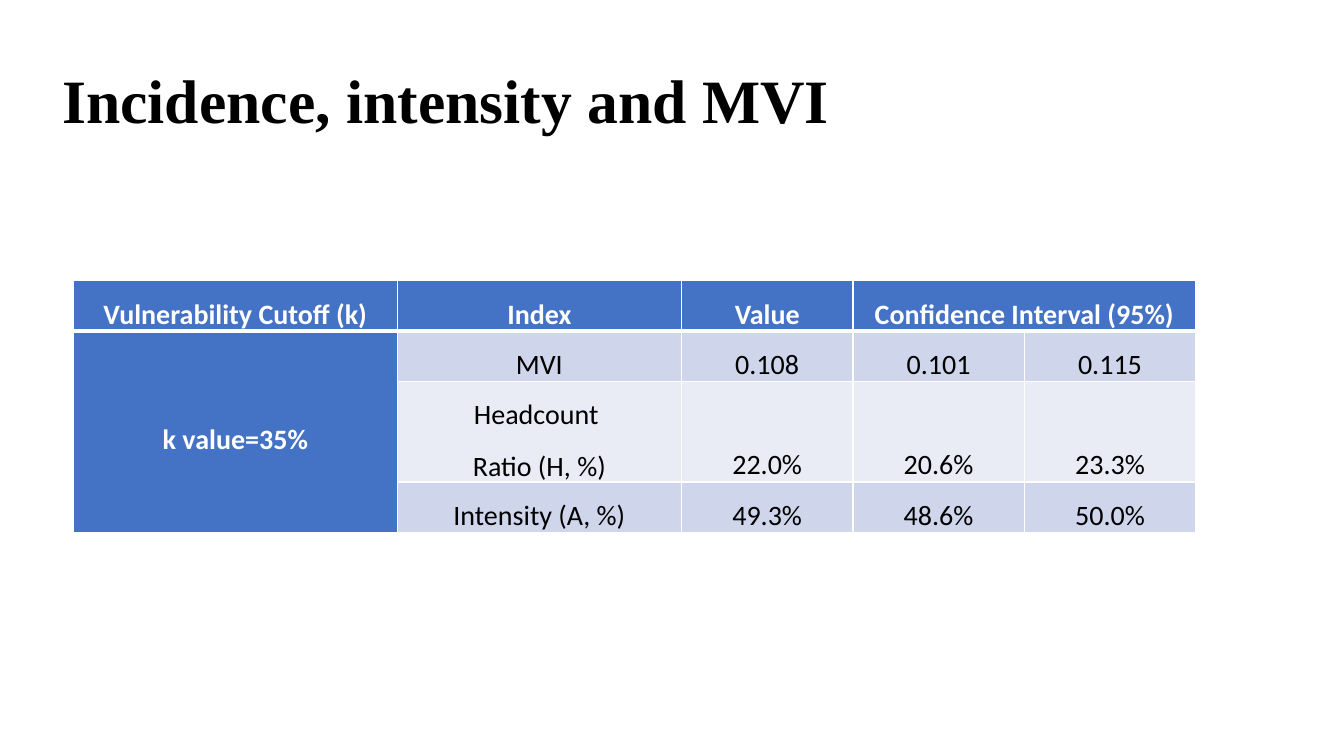
from lxml import etree
from pptx import Presentation
from pptx import util as u
from pptx.dml.color import RGBColor
from pptx.enum import text
from pptx.oxml.ns import qn

BLUE, BAND, LIGHT = "4472C4", "CFD5EA", "E9EBF5"
WHITE, BLACK = "FFFFFF", "000000"
MIDDLE, BOTTOM = text.MSO_ANCHOR.MIDDLE, text.MSO_ANCHOR.BOTTOM


def color(value):
    return RGBColor.from_string(value)


class Deck:
    title_font = "Times New Roman"
    body_font = "Calibri"

    def __init__(self):
        self.prs = Presentation()
        self.prs.slide_width = u.Inches(13.33)
        self.prs.slide_height = u.Inches(7.5)
        self.s = self.prs.slides.add_slide(self.prs.slide_layouts[6])

    def run(self, p, words, font, size, ink, bold):
        r = p.add_run()
        r.text = words
        r.font.name = font
        r.font.size = u.Pt(size)
        r.font.bold = bold
        r.font.color.rgb = color(ink)

    def title(self, words, *box):
        sp = self.s.shapes.add_textbox(*map(u.Inches, box))
        tf = sp.text_frame
        tf.word_wrap = True
        tf.vertical_anchor = MIDDLE
        p = tf.paragraphs[0]
        p.line_spacing = 0.9
        self.run(p, words, self.title_font, 44, BLACK, True)

    def borders(self, cell, top, bottom):
        tcPr = cell._tc.get_or_add_tcPr()
        for side, width in (("L", 1), ("R", 1), ("T", top), ("B", bottom)):
            ln = etree.SubElement(tcPr, qn(f"a:ln{side}"), w=str(u.Pt(width)))
            fill = etree.SubElement(ln, qn("a:solidFill"))
            etree.SubElement(fill, qn("a:srgbClr"), val=WHITE)

    def cell(self, cell, words, row, heading, anchor):
        self.borders(cell, 3 if row == 1 else 1, 3 if row == 0 else 1)
        cell.fill.solid()
        cell.fill.fore_color.rgb = color(
            BLUE if heading else BAND if row % 2 else LIGHT)
        cell.margin_left = cell.margin_right = u.Inches(0.05)
        cell.margin_top = cell.margin_bottom = 0
        cell.vertical_anchor = anchor
        tf = cell.text_frame
        for i, line in enumerate(words.split("\n") if words else []):
            p = tf.add_paragraph() if i else tf.paragraphs[0]
            p.alignment = text.PP_ALIGN.CENTER
            p.line_spacing = 1.5
            self.run(p, line, self.body_font, 20,
                     WHITE if heading else BLACK, heading)

    def table(self, rows, widths, heights, left, top):
        table = self.s.shapes.add_table(
            len(rows), len(widths), u.Inches(left), u.Inches(top),
            u.Inches(sum(widths)), u.Inches(sum(heights))).table
        for column, width in zip(table.columns, widths):
            column.width = u.Inches(width)
        for row, height in zip(table.rows, heights):
            row.height = u.Inches(height)
        for i, row in enumerate(rows):
            for j, words in enumerate(row):
                anchor = BOTTOM if i > 1 and j > 1 else MIDDLE
                self.cell(table.cell(i, j), words, i, i == 0 or j == 0, anchor)
        return table


def main():
    deck = Deck()
    deck.title("Incidence, intensity and MVI", 0.52, 0.3, 11.5, 1.45)
    rows = [
        ["Vulnerability Cutoff (k)", "Index", "Value",
         "Confidence Interval (95%)", ""],
        ["k value=35%", "MVI", "0.108", "0.101", "0.115"],
        ["", "Headcount \nRatio (H, %)", "22.0%", "20.6%", "23.3%"],
        ["", "Intensity (A, %)", "49.3%", "48.6%", "50.0%"],
    ]
    table = deck.table(rows, [3.21, 2.82, 1.7, 1.7, 1.7],
                       [0.45, 0.45, 0.96, 0.45], 0.73, 2.78)
    table.cell(0, 3).merge(table.cell(0, 4))
    table.cell(1, 0).merge(table.cell(3, 0))
    deck.prs.save("out.pptx")


if __name__ == "__main__":
    main()
